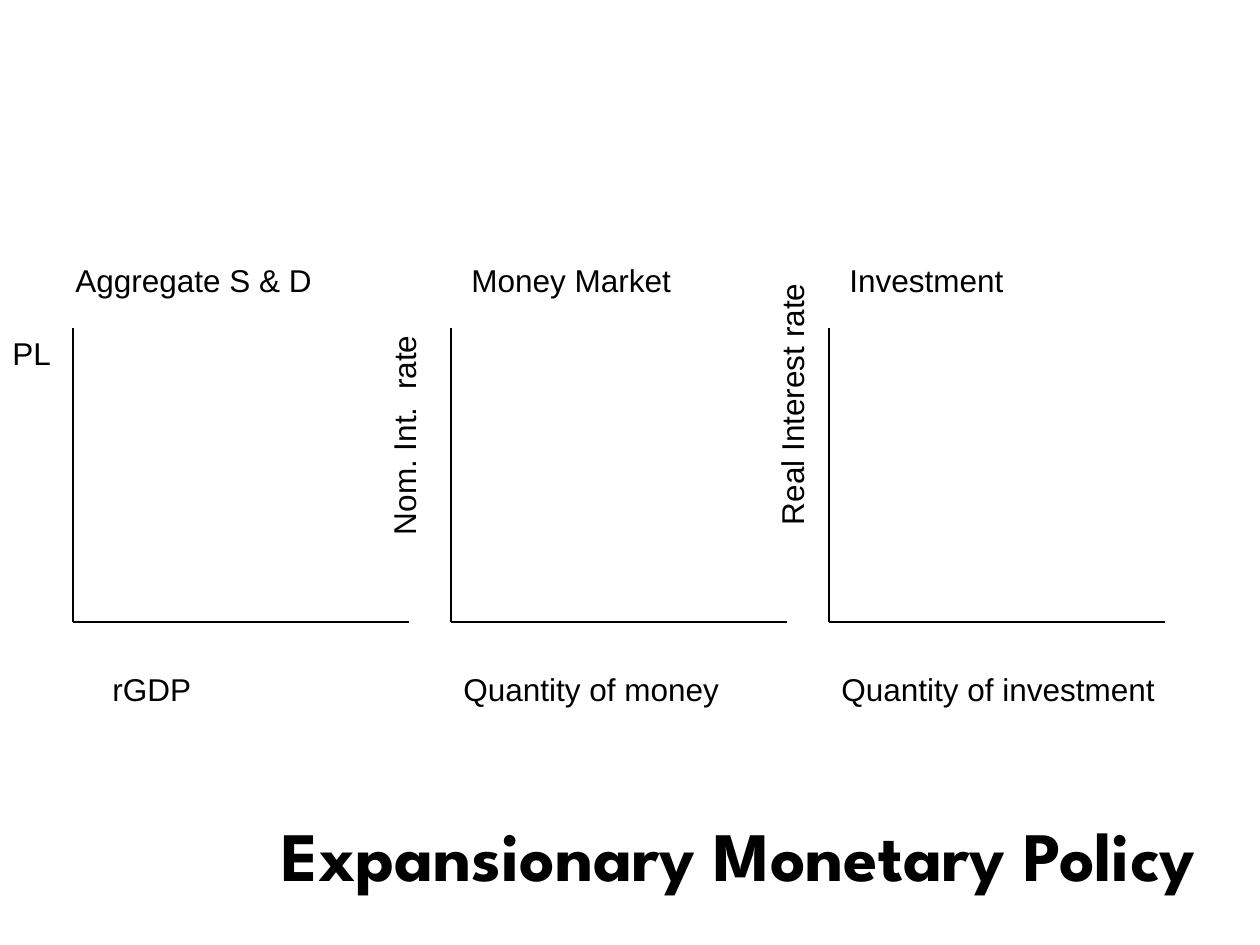
"""Build the Expansionary Monetary Policy slide: three empty graphs and a title."""
from dataclasses import dataclass

from lxml import etree
from pptx import Presentation
from pptx.dml.color import RGBColor
from pptx.enum.shapes import MSO_CONNECTOR
from pptx.enum.text import MSO_ANCHOR, PP_ALIGN
from pptx.oxml.ns import qn
from pptx.util import Emu, Pt

STRAIGHT = MSO_CONNECTOR.STRAIGHT
MIDDLE, TOP = MSO_ANCHOR.MIDDLE, MSO_ANCHOR.TOP
LEFT, RIGHT = PP_ALIGN.LEFT, PP_ALIGN.RIGHT


@dataclass(frozen=True)
class Theme:
    ink: RGBColor = RGBColor(0, 0, 0)
    body_font: str = "Arial"
    title_font: str = "League Spartan"
    body_size: float = 18
    title_size: float = 39.6
    line_width: float = 0.75


THEME = Theme()
SLIDE_W, SLIDE_H = 1260, 945
TITLE = "Expansionary Monetary Policy"
TITLE_BOX = (53, 809, 1155, 89)

GRAPHS = [
    {"heading": ("Aggregate S & D", -10), "x_label": ("rGDP", 27),
     "y_label": ("PL", (0, 328, 84, 50), 0)},
    {"heading": ("Money Market", 8), "x_label": ("Quantity of money", 0),
     "y_label": ("Nom. Int.  rate", (267, 386, 273, 50), 270)},
    {"heading": ("Investment", 8), "x_label": ("Quantity of investment", 0),
     "y_label": ("Real Interest rate", (655, 376, 273, 50), 270)},
]
AXIS_X, AXIS_TOP, AXIS_W, AXIS_H, GRAPH_STEP = 73, 328, 336, 294, 378
HEADING_Y, X_LABEL_Y, LABEL_W, LABEL_H = 255, 664, 345, 50


def px(n):
    return Emu(round(n * 914400 / 126))


def add_text(s, text, box, size=THEME.body_size, font=THEME.body_font,
             bold=False, align=LEFT, anchor=TOP, rotation=0):
    sp = s.shapes.add_textbox(*map(px, box))
    sp.rotation = rotation
    tf = sp.text_frame
    tf.word_wrap = True
    tf.vertical_anchor = anchor
    p = tf.paragraphs[0]
    p.alignment = align
    r = p.add_run()
    r.text = text
    r.font.name = font
    r.font.size = Pt(size)
    r.font.bold = bold
    r.font.color.rgb = THEME.ink


def add_axis(s, x1, y1, x2, y2):
    line = s.shapes.add_connector(STRAIGHT, *map(px, (x1, y1, x2, y2)))
    line.line.color.rgb = THEME.ink
    line.line.width = Pt(THEME.line_width)
    etree.SubElement(line._element.spPr, qn("a:effectLst"))


def add_graph(s, x, graph):
    bottom = AXIS_TOP + AXIS_H
    add_axis(s, x, AXIS_TOP, x, bottom)
    add_axis(s, x, bottom, x + AXIS_W, bottom)
    for key, y in (("heading", HEADING_Y), ("x_label", X_LABEL_Y)):
        text, offset = graph[key]
        add_text(s, text, (x + offset, y, LABEL_W, LABEL_H))
    text, box, rotation = graph["y_label"]
    add_text(s, text, box, rotation=rotation)


def main():
    prs = Presentation()
    prs.slide_width, prs.slide_height = px(SLIDE_W), px(SLIDE_H)
    s = prs.slides.add_slide(prs.slide_layouts[6])
    add_text(s, TITLE, TITLE_BOX, THEME.title_size, THEME.title_font,
             bold=True, align=RIGHT, anchor=MIDDLE)
    for i, graph in enumerate(GRAPHS):
        add_graph(s, AXIS_X + i * GRAPH_STEP, graph)
    prs.save("out.pptx")


if __name__ == "__main__":
    main()
